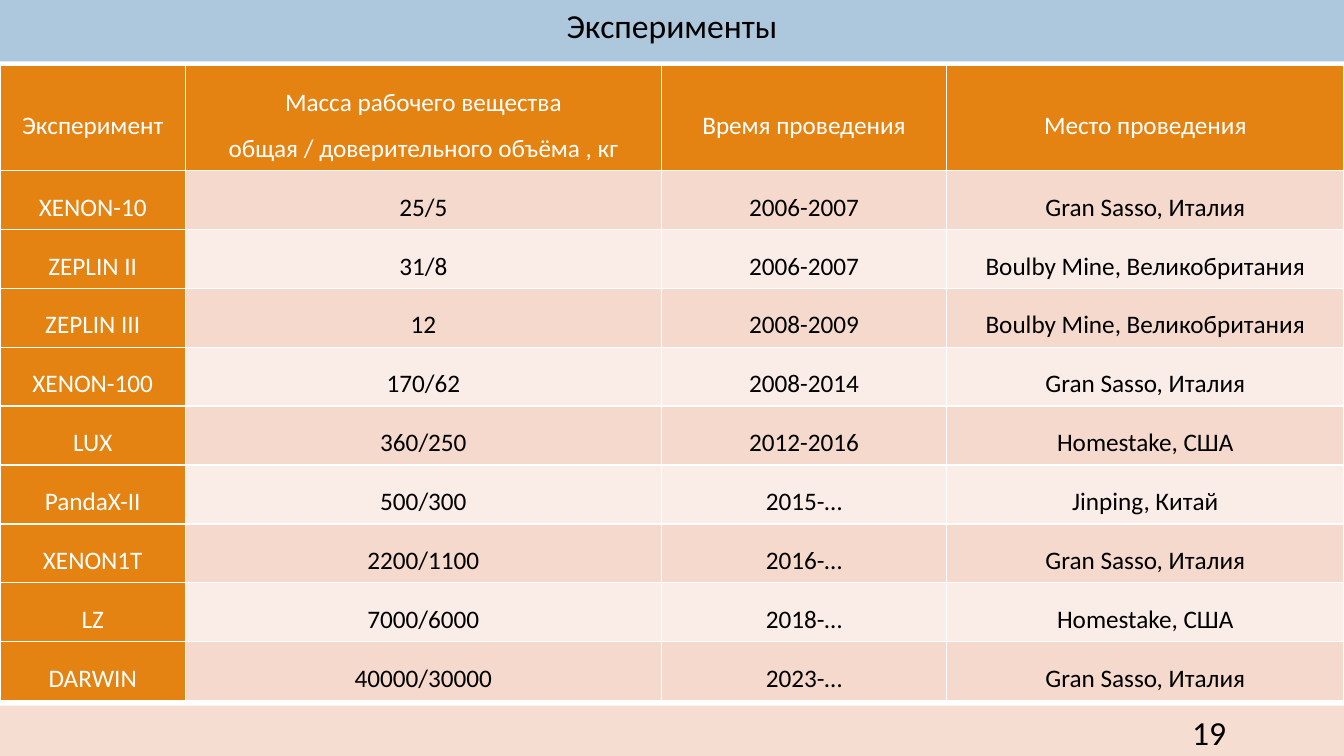
from lxml import etree
from pptx import Presentation
from pptx.dml.color import RGBColor
from pptx.enum.shapes import MSO_SHAPE
from pptx.enum.text import MSO_ANCHOR, PP_ALIGN
from pptx.oxml.ns import qn
from pptx.util import Inches, Pt

RECT = MSO_SHAPE.RECTANGLE
TOP, MIDDLE = MSO_ANCHOR.TOP, MSO_ANCHOR.MIDDLE
CENTER, RIGHT = PP_ALIGN.CENTER, PP_ALIGN.RIGHT

COLORS = {
    "blue": "ADC8DD", "peach": "F5DDD2", "orange": "E48312",
    "odd": "F5D9CC", "even": "FAEDE7", "white": "FFFFFF", "black": "000000",
}
WIDTHS = [1.84, 4.72, 2.83, 3.94]
HEAD = [
    "Эксперимент",
    "Масса рабочего вещества\nобщая / доверительного объёма , кг",
    "Время проведения",
    "Место проведения",
]
ROWS = [
    ["XENON-10", "25/5", "2006-2007", "Gran Sasso, Италия"],
    ["ZEPLIN II", "31/8", "2006-2007", "Boulby Mine, Великобритания"],
    ["ZEPLIN III", "12", "2008-2009", "Boulby Mine, Великобритания"],
    ["XENON-100", "170/62", "2008-2014", "Gran Sasso, Италия"],
    ["LUX", "360/250", "2012-2016", "Homestake, США"],
    ["PandaX-II", "500/300", "2015-…", "Jinping, Китай"],
    ["XENON1T", "2200/1100", "2016-…", "Gran Sasso, Италия"],
    ["LZ", "7000/6000", "2018-…", "Homestake, США"],
    ["DARWIN", "40000/30000", "2023-…", "Gran Sasso, Италия"],
]


class Deck:
    def __init__(self, wide, high):
        self.font = "Calibri"
        self.prs = Presentation()
        self.prs.slide_width, self.prs.slide_height = Inches(wide), Inches(high)
        self.slide = self.prs.slides.add_slide(self.prs.slide_layouts[6])

    def color(self, name):
        return RGBColor.from_string(COLORS[name])

    def style(self, para, size, color, align):
        para.alignment = align
        para.font.name, para.font.size = self.font, Pt(size)
        para.font.color.rgb = self.color(color)

    def band(self, top, height, color):
        shape = self.slide.shapes.add_shape(
            RECT, 0, Inches(top), self.prs.slide_width, Inches(height))
        shape.shadow.inherit = False
        shape.fill.solid()
        shape.fill.fore_color.rgb = self.color(color)
        shape.line.fill.background()

    def text(self, words, box, align, anchor):
        frame = self.slide.shapes.add_textbox(*map(Inches, box)).text_frame
        frame.word_wrap = True
        frame.vertical_anchor = anchor
        frame.text = words
        self.style(frame.paragraphs[0], 24, "black", align)

    def border(self, cell):
        props = cell._tc.get_or_add_tcPr()
        for at, side in enumerate(("lnL", "lnR", "lnT", "lnB")):
            line = etree.Element(qn("a:" + side), w=str(Pt(1)))
            fill = etree.SubElement(line, qn("a:solidFill"))
            etree.SubElement(fill, qn("a:srgbClr"), val=COLORS["white"])
            props.insert(at, line)

    def cell(self, cell, words, fill, color):
        cell.fill.solid()
        cell.fill.fore_color.rgb = self.color(fill)
        self.border(cell)
        cell.vertical_anchor = MIDDLE
        cell.text = words
        paras = cell.text_frame.paragraphs
        for para in paras:
            self.style(para, 18, color, CENTER)
            para.line_spacing = 1.5
            if len(paras) == 1:
                para.space_after = Pt(6)

    def table(self, top, widths, heights, rows):
        table = self.slide.shapes.add_table(
            len(rows), len(widths), 0, Inches(top),
            Inches(sum(widths)), Inches(sum(heights))).table
        for col, width in zip(table.columns, widths):
            col.width = Inches(width)
        for r, (row, height) in enumerate(zip(rows, heights)):
            table.rows[r].height = Inches(height)
            for c, words in enumerate(row):
                if r == 0 or c == 0:
                    fill, color = "orange", "white"
                else:
                    fill, color = "odd" if r % 2 else "even", "black"
                self.cell(table.cell(r, c), words, fill, color)


def main():
    deck = Deck(13.33, 7.5)

    # Footer and title bands
    deck.band(7, 0.5, "peach")
    deck.band(0, 0.61, "blue")

    # Slide number
    deck.text("19", (10.83, 7.06, 1.43, 0.4), RIGHT, MIDDLE)

    # Table of experiments
    deck.table(0.65, WIDTHS, [1.04] + [0.585] * len(ROWS), [HEAD] + ROWS)

    # Title
    deck.text("Эксперименты", (0, 0, 13.33, 0.5), CENTER, TOP)

    deck.prs.save("out.pptx")


if __name__ == "__main__":
    main()
